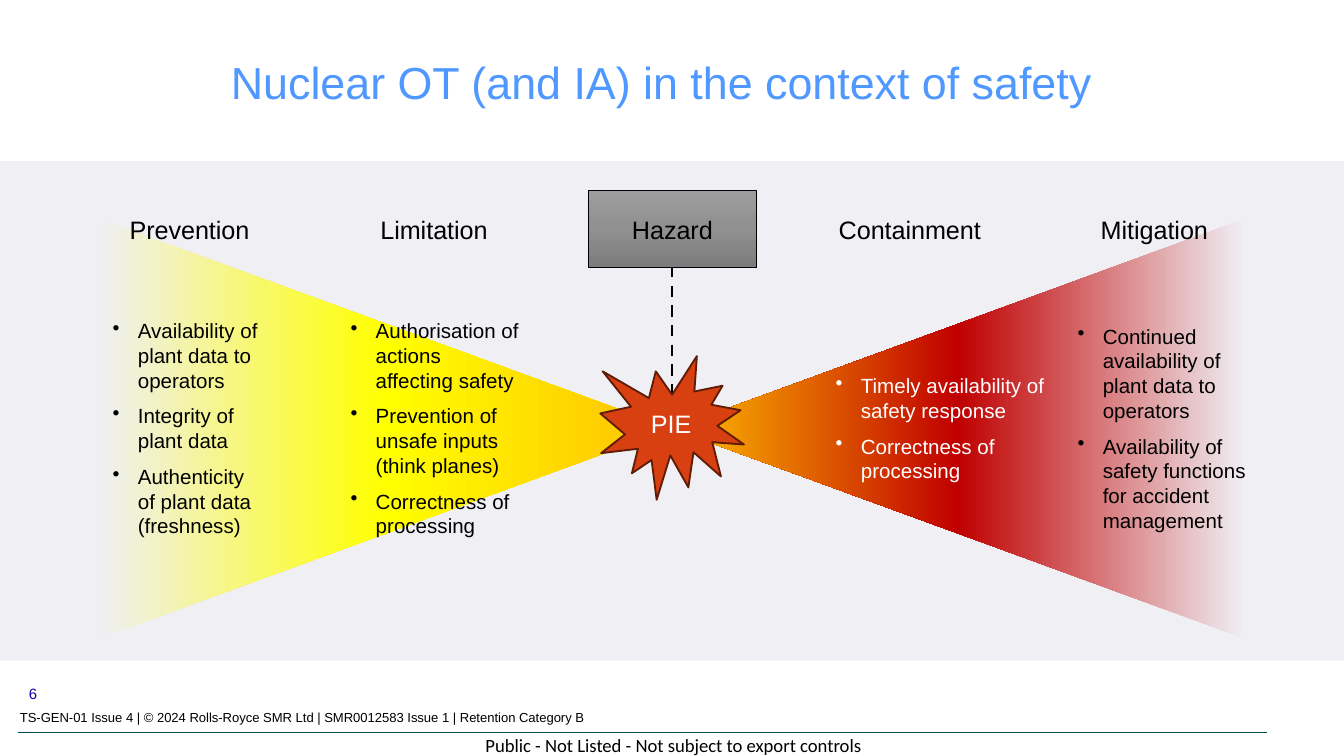
from lxml import etree
from copy import deepcopy

from pptx import Presentation
from pptx.dml.color import RGBColor
from pptx.enum.dml import MSO_LINE
from pptx.enum.shapes import MSO_CONNECTOR, MSO_SHAPE
from pptx.enum.text import MSO_ANCHOR, PP_ALIGN
from pptx.oxml.ns import qn
from pptx.util import Pt

RECT = MSO_SHAPE.RECTANGLE
CONE = MSO_SHAPE.ISOSCELES_TRIANGLE
BURST = MSO_SHAPE.EXPLOSION1
LINE = MSO_CONNECTOR.STRAIGHT
DASH = MSO_LINE.DASH
LEFT, MID, RIGHT = PP_ALIGN.LEFT, PP_ALIGN.CENTER, PP_ALIGN.RIGHT
TOP, CENTRE = MSO_ANCHOR.TOP, MSO_ANCHOR.MIDDLE

BLACK, WHITE, PALE = "000000", "FFFFFF", "EFEFF4"
AMBER = "FFC000"
HEAD, BODY = 13.5, 11
INDENT = 13.5


def tint(code):
    return RGBColor.from_string(code)


def write(shape, *paras, size=HEAD, color=BLACK, font="Arial", align=LEFT,
          anchor=TOP, wrap=True, inset=None, space=None, after=None,
          bullet=False):
    """Fill the shape with one paragraph per string."""
    frame = shape.text_frame
    frame.word_wrap = wrap
    frame.vertical_anchor = anchor
    if inset is not None:
        frame.margin_left = frame.margin_right = Pt(inset)
        frame.margin_top = frame.margin_bottom = Pt(inset)
    for i, text in enumerate(paras):
        para = frame.add_paragraph() if i else frame.paragraphs[0]
        if bullet:
            props = para._p.get_or_add_pPr()
            props.set("marL", str(Pt(INDENT)))
            props.set("indent", str(-Pt(INDENT)))
            etree.SubElement(props, qn("a:buChar")).set("char", "•")
        para.alignment = align
        if space:
            para.line_spacing = space
        if after:
            para.space_after = Pt(after)
        run = para.add_run()
        run.text = text
        run.font.size = Pt(size)
        run.font.name = font
        run.font.color.rgb = tint(color)


class Deck:
    def __init__(self):
        self.file = Presentation()
        self.file.slide_width, self.file.slide_height = Pt(720), Pt(405)
        self.slide = self.file.slides.add_slide(self.file.slide_layouts[6])

    def text(self, box, *paras, **style):
        area = self.slide.shapes.add_textbox(*map(Pt, box))
        write(area, *paras, **style)

    def shape(self, kind, box, fill, edge=None, width=0.5, turn=0):
        """Add a preset shape; fill is a hex string or a (stops, angle) pair."""
        item = self.slide.shapes.add_shape(kind, *map(Pt, box))
        item.shadow.inherit = False
        item.rotation = turn
        if isinstance(fill, str):
            item.fill.solid()
            item.fill.fore_color.rgb = tint(fill)
        else:
            self.blend(item, *fill)
        if edge:
            item.line.color.rgb = tint(edge)
            item.line.width = Pt(width)
        else:
            item.line.fill.background()
        return item

    def blend(self, item, codes, angle):
        """Give the item a gradient of three evenly spaced colours."""
        item.fill.gradient()
        item.fill.gradient_angle = angle
        stops = item._element.spPr.find(".//" + qn("a:gsLst"))
        stops.append(deepcopy(stops[0]))
        for i, (stop, code) in enumerate(zip(item.fill.gradient_stops, codes)):
            stop.position = i / 2
            stop.color.rgb = tint(code)

    def line(self, ends, color, width, dash=None):
        item = self.slide.shapes.add_connector(LINE, *map(Pt, ends))
        item.line.color.rgb = tint(color)
        item.line.width = Pt(width)
        if dash:
            item.line.dash_style = dash
        etree.SubElement(item._element.spPr, qn("a:effectLst"))


def main():
    deck = Deck()

    # Frame
    deck.text((0, 363, 27, 17), "6", size=8, color="10069F", align=RIGHT)
    deck.text((3.6, 376.5, 318, 16),
              "TS-GEN-01 Issue 4 | © 2024 Rolls-Royce SMR Ltd | "
              "SMR0012583 Issue 1 | Retention Category B", size=7, wrap=False)
    deck.text((157.7, 393.1, 406, 12.2),
              "Public - Not Listed - Not subject to export controls",
              size=10, font="Calibri", align=MID, inset=0)
    deck.shape(RECT, (0, 86.4, 720, 267.6), PALE)
    deck.line((9.4, 392.4, 679, 392.4), "004A50", 0.5)
    deck.line((360, 142.6, 360, 229.7), BLACK, 1.5, DASH)
    deck.text((116.6, 25.2, 586, 41), "Nuclear OT (and IA) in the context of safety",
              size=24, color="4F98FF", anchor=CENTRE, space=0.9)

    # Bow tie
    for left, turn, core in ((94.3, 90, "FFFF00"), (401, 270, "C00000")):
        deck.shape(CONE, (left, 76.3, 224.6, 306.7),
                   ((PALE, core, AMBER), 90), turn=turn)
    burst = deck.shape(BURST, (321.6, 190.8, 77, 77), "D83F11", "5F1C07", 1)
    write(burst, "PIE", color=WHITE, align=MID, anchor=CENTRE)
    hazard = deck.shape(RECT, (315.2, 102.2, 90, 41),
                        (("9D9D9D", "909090", "7C7C7C"), 270), BLACK)
    write(hazard, "Hazard", align=MID, anchor=CENTRE)

    # Each column: heading, its left edge, list box, list colour, points
    columns = (
        ("Prevention", 53.3, (53.3, 166.3, 96.5, 126), BLACK,
         ("Availability of plant data to operators",
          "Integrity of plant data",
          "Authenticity of plant data (freshness)")),
        ("Limitation", 184.3, (180.7, 166.3, 106.6, 126), BLACK,
         ("Authorisation of actions affecting safety",
          "Prevention of unsafe inputs (think planes)",
          "Correctness of processing")),
        ("Containment", 439.2, (440.6, 195.8, 128.9, 67), WHITE,
         ("Timely availability of safety response",
          "Correctness of processing")),
        ("Mitigation", 570.2, (570.2, 169.2, 107.3, 120.2), BLACK,
         ("Continued availability of plant data to operators",
          "Availability of safety functions for accident management")),
    )
    for name, left, box, color, points in columns:
        deck.text((left, 102.2, 96.5, 41), name, align=MID, anchor=CENTRE)
        deck.text(box, *points, size=BODY, color=color, anchor=CENTRE,
                  after=6, bullet=True)

    deck.file.save("out.pptx")


if __name__ == "__main__":
    main()
